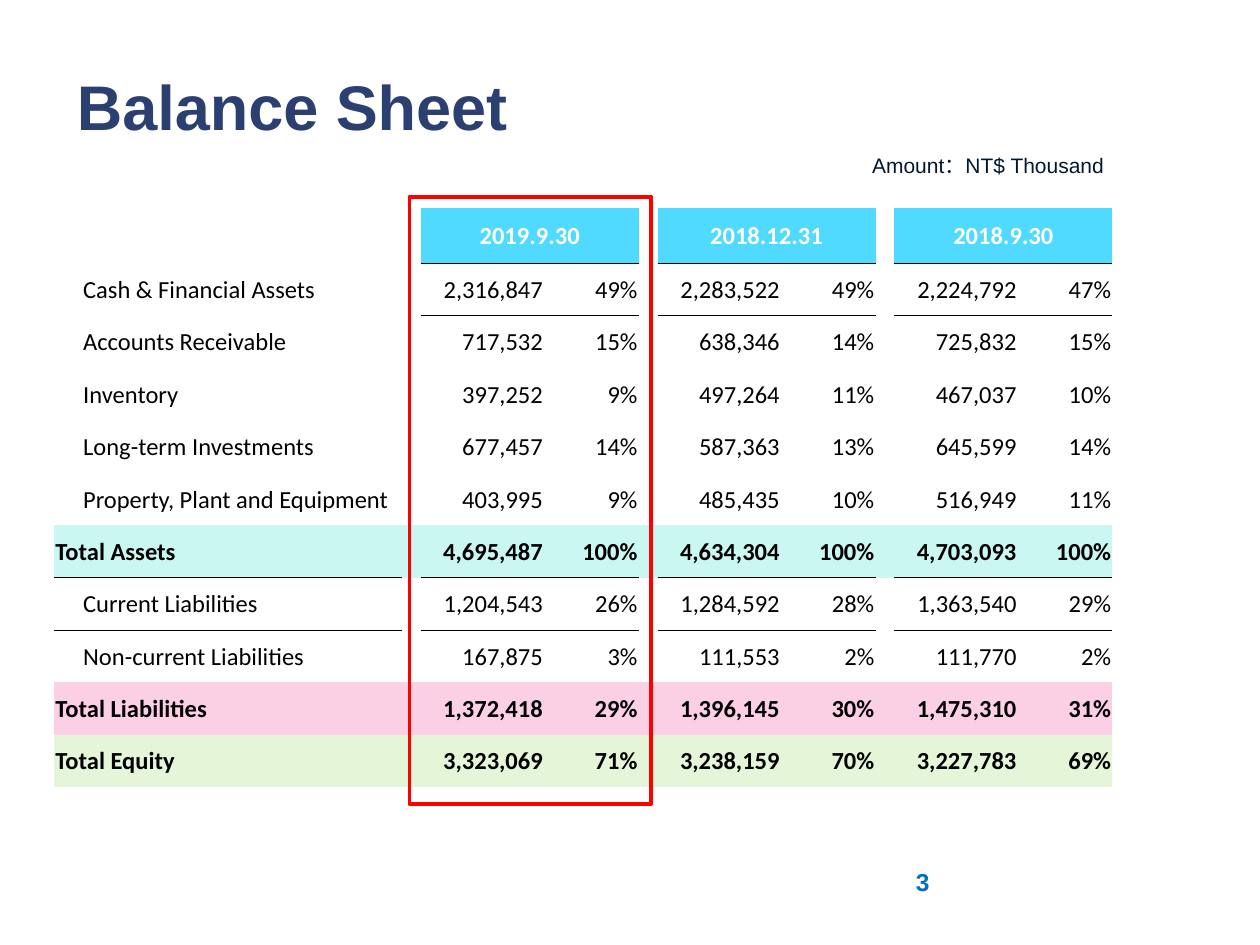
from dataclasses import dataclass

from lxml import etree
from pptx import Presentation
from pptx import util as u
from pptx.dml.color import RGBColor
from pptx.enum import shapes, text
from pptx.oxml.ns import qn

GRID = u.Inches(0.1)  # the slide is 100 columns by 75 rows
PLAIN_STYLE = "{2D5ABB26-0587-4C30-8999-92F81FD0307C}"  # no style, no grid


@dataclass(frozen=True)
class Theme:
    heading_font: str = "Arial"
    table_font: str = "Calibri"
    title_size: float = 36
    body_size: float = 14
    note_size: float = 12
    title: str = "2C3F71"
    page: str = "0070C0"
    note: str = "00192F"
    ink: str = "000000"
    header_text: str = "FFFFFF"
    header: str = "51DAFF"
    assets: str = "CAF7F1"
    liabilities: str = "FBD0E4"
    equity: str = "E5F6D8"
    highlight: str = "FF0000"


T = Theme()
DATES = ["2019.9.30", "2018.12.31", "2018.9.30"]
# label, amount and share for each date, band colour of a total row
ROWS = [
    ("Cash & Financial Assets", "2,316,847 49% 2,283,522 49% 2,224,792 47%", None),
    ("Accounts Receivable", "717,532 15% 638,346 14% 725,832 15%", None),
    ("Inventory", "397,252 9% 497,264 11% 467,037 10%", None),
    ("Long-term Investments", "677,457 14% 587,363 13% 645,599 14%", None),
    ("Property, Plant and Equipment", "403,995 9% 485,435 10% 516,949 11%", None),
    ("Total Assets", "4,695,487 100% 4,634,304 100% 4,703,093 100%", T.assets),
    ("Current Liabilities", "1,204,543 26% 1,284,592 28% 1,363,540 29%", None),
    ("Non-current Liabilities", "167,875 3% 111,553 2% 111,770 2%", None),
    ("Total Liabilities", "1,372,418 29% 1,396,145 30% 1,475,310 31%", T.liabilities),
    ("Total Equity", "3,323,069 71% 3,238,159 70% 3,227,783 69%", T.equity),
]
COLS = [27.6] + [1.5, 10.2, 7.1] * len(DATES)
HEADER_H, ROW_H = 4.4, 4.16


def grid(*cells):
    return [round(c * GRID) for c in cells]


def write(tf, words, size, color, font=T.heading_font, bold=False,
          align=text.PP_ALIGN.LEFT):
    p = tf.paragraphs[0]
    p.text = words
    p.alignment = align
    for r in p.runs:
        r.font.name, r.font.size, r.font.bold = font, u.Pt(size), bold
        r.font.color.rgb = RGBColor.from_string(color)


def add_title(s, words, *box):
    sp = s.shapes.title
    sp.left, sp.top, sp.width, sp.height = grid(*box)
    sp.text_frame.vertical_anchor = text.MSO_ANCHOR.MIDDLE
    write(sp.text_frame, words, T.title_size, T.title, bold=True)


def add_label(s, words, box, *style, **options):
    tf = s.shapes.add_textbox(*grid(*box)).text_frame
    tf.word_wrap = True
    write(tf, words, *style, **options)


def add_frame(s, *box):
    sp = s.shapes.add_shape(shapes.MSO_SHAPE.RECTANGLE, *grid(*box))
    sp.shadow.inherit = False
    sp.fill.background()
    sp.line.color.rgb = RGBColor.from_string(T.highlight)
    sp.line.width = u.Pt(2.25)


def format_cell(cell, fill=None):
    cell.margin_left = cell.margin_right = cell.margin_top = u.Inches(0.01)
    cell.margin_bottom = 0
    cell.vertical_anchor = text.MSO_ANCHOR.MIDDLE
    if fill:
        cell.fill.solid()
        cell.fill.fore_color.rgb = RGBColor.from_string(fill)
    else:
        cell.fill.background()


def rule_below(table, row, col, width):
    """Draw the line shared by a cell and the one beneath it."""
    for r, side in ((row, "a:lnB"), (row + 1, "a:lnT")):
        ln = etree.Element(qn(side), w=str(u.Pt(width)))
        fill = etree.SubElement(ln, qn("a:solidFill"))
        etree.SubElement(fill, qn("a:srgbClr"), val=T.ink)
        table.cell(r, col)._tc.get_or_add_tcPr().insert(0, ln)


def fill_header(table):
    for i, date in enumerate(DATES):
        col = 2 + 3 * i
        cell = table.cell(0, col)
        cell.merge(table.cell(0, col + 1))
        format_cell(cell, T.header)
        write(cell.text_frame, date, T.body_size, T.header_text, T.table_font,
              True, text.PP_ALIGN.CENTER)


def fill_row(table, row, label, values, band):
    for cell in table.rows[row].cells:
        format_cell(cell, band)
    style = (T.body_size, T.ink, T.table_font, band is not None)
    name = table.cell(row, 0)
    if not band:
        name.margin_left = u.Inches(0.23)
    write(name.text_frame, label, *style)
    for i, value in enumerate(values.split()):
        group, part = divmod(i, 2)
        cell = table.cell(row, 2 + 3 * group + part)
        if part == 0:
            cell.margin_right = u.Inches(0.05)
        write(cell.text_frame, value, *style, text.PP_ALIGN.RIGHT)


def add_balance_table(s, left, top):
    height = HEADER_H + ROW_H * len(ROWS)
    table = s.shapes.add_table(len(ROWS) + 1, len(COLS),
                               *grid(left, top, sum(COLS), height)).table
    table.first_row = table.horz_banding = False
    table._tbl.tblPr.find(qn("a:tableStyleId")).text = PLAIN_STYLE
    for column, width in zip(table.columns, grid(*COLS)):
        column.width = width
    for i, row in enumerate(table.rows):
        row.height = grid(ROW_H if i else HEADER_H)[0]
    for cell in table.rows[0].cells:
        format_cell(cell)
    fill_header(table)
    for i, entry in enumerate(ROWS, 1):
        fill_row(table, i, *entry)
    total_assets = [band for _, _, band in ROWS].index(T.assets) + 1
    for col in range(len(COLS)):
        if col % 3 != 1:
            rule_below(table, total_assets, col, 0.5)
            if col:
                rule_below(table, 0, col, 1)


def main():
    prs = Presentation()
    prs.slide_width, prs.slide_height = grid(100, 75)
    s = prs.slides.add_slide(prs.slide_layouts[5])
    add_title(s, "Balance Sheet", 5.1, 2.1, 85.8, 12.5)
    add_balance_table(s, 4.3, 16.5)
    add_label(s, "3", (71.7, 68.3, 23.3, 5.2), T.body_size, T.page, bold=True)
    add_frame(s, 32.5, 15.6, 19.2, 48.2)
    add_label(s, "Amount：NT$ Thousand", (65.7, 11.6, 22.9, 3), T.note_size,
              T.note, align=text.PP_ALIGN.RIGHT)
    prs.save("out.pptx")


if __name__ == "__main__":
    main()
